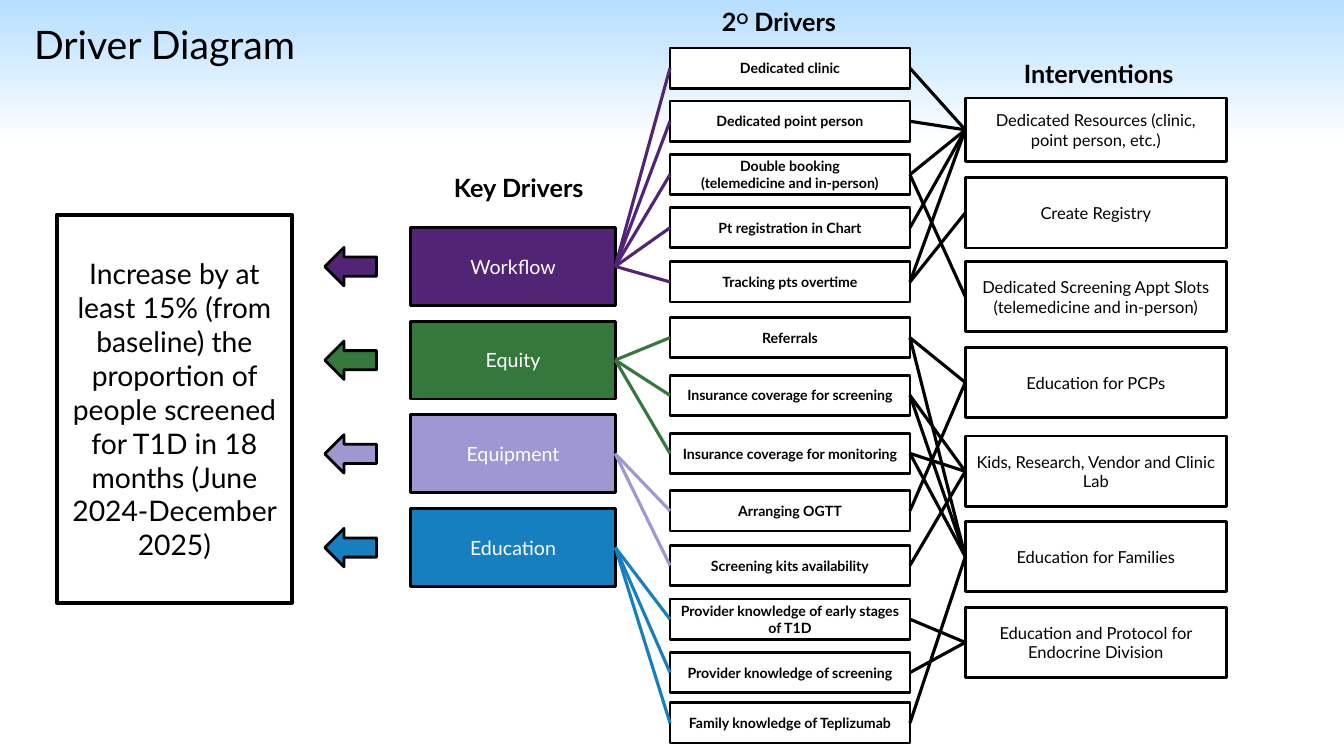
import pptx
import pptx.dml.color
import pptx.enum.shapes
import pptx.enum.text
import pptx.oxml.ns
import pptx.util
from lxml import etree

Pt = pptx.util.Pt
SHAPES = pptx.enum.shapes.MSO_SHAPE
ALIGN = pptx.enum.text.PP_ALIGN
ANCHOR = pptx.enum.text.MSO_ANCHOR
LEFT_SITE, RIGHT_SITE = 1, 3

KEY_DRIVERS = [
    ("Workflow", "522476", range(0, 5)),
    ("Equity", "34793B", range(5, 8)),
    ("Equipment", "9D97D2", range(8, 10)),
    ("Education", "167FC0", range(10, 13)),
]

SECONDARY_DRIVERS = [
    (34.3, "Dedicated clinic", [0]),
    (72.2, "Dedicated point person", [0]),
    (110.3, "Double booking\n(telemedicine and in-person)", [0, 2]),
    (148.3, "Pt registration in Chart", [0]),
    (187, "Tracking pts overtime", [0, 1]),
    (226.8, "Referrals", [3, 5]),
    (268, "Insurance coverage for screening", [4, 5]),
    (309.5, "Insurance coverage for monitoring", [4, 5]),
    (350.5, "Arranging OGTT", [3]),
    (389.5, "Screening kits availability", [4]),
    (427.9, "Provider knowledge of early stages of T1D", [6]),
    (466, "Provider knowledge of screening", [6]),
    (502, "Family knowledge of Teplizumab", [5]),
]

INTERVENTIONS = [
    (70, 45.5, "Dedicated Resources (clinic, point person, etc.)"),
    (126.8, 50.4, "Create Registry"),
    (186.7, 50.4, "Dedicated Screening Appt Slots (telemedicine and in-person)"),
    (248, 50.4, "Education for PCPs"),
    (311.5, 50.4, "Kids, Research, Vendor and Clinic Lab"),
    (372.4, 50.4, "Education for Families"),
    (433.7, 50.4, "Education and Protocol for Endocrine Division"),
]


def color(hex_string):
    return pptx.dml.color.RGBColor.from_string(hex_string)


def add_run(para, text, size, ink="000000", bold=False):
    span = para.add_run()
    span.text = text
    span.font.name = "Lato"
    span.font.size = Pt(size)
    span.font.bold = bold
    span.font.color.rgb = color(ink)
    return span


def add_box(page, left, top, width, height, fill, line_width=2, kind=SHAPES.RECTANGLE):
    box = page.shapes.add_shape(kind, Pt(left), Pt(top), Pt(width), Pt(height))
    box.shadow.inherit = False
    box.fill.solid()
    box.fill.fore_color.rgb = color(fill)
    box.line.color.rgb = color("000000")
    box.line.width = Pt(line_width)
    return box


def add_label(box, text, size, ink="000000", bold=False):
    frame = box.text_frame
    frame.word_wrap = True
    frame.vertical_anchor = ANCHOR.MIDDLE
    for number, line in enumerate(text.split("\n")):
        para = frame.add_paragraph() if number else frame.paragraphs[0]
        para.alignment = ALIGN.CENTER
        add_run(para, line, size, ink, bold)


def add_text(page, left, top, width, height):
    box = page.shapes.add_textbox(Pt(left), Pt(top), Pt(width), Pt(height))
    box.text_frame.word_wrap = True
    return box.text_frame


def add_heading(page, left, top, width, parts):
    frame = add_text(page, left, top, width, 20)
    frame.margin_left = frame.margin_right = 0
    frame.margin_top = frame.margin_bottom = 0
    para = frame.paragraphs[0]
    para.alignment = ALIGN.CENTER
    para.line_spacing = 0.9
    for text, raised in parts:
        span = add_run(para, text, 18, bold=True)
        if raised:
            span.font._element.set("baseline", "30000")


def add_link(page, source, target, hex_string):
    link = page.shapes.add_connector(pptx.enum.shapes.MSO_CONNECTOR.STRAIGHT, 0, 0, 0, 0)
    link.begin_connect(source, RIGHT_SITE)
    link.end_connect(target, LEFT_SITE)
    link.line.color.rgb = color(hex_string)
    link.line.width = Pt(2.25)
    etree.SubElement(link._element.spPr, pptx.oxml.ns.qn("a:effectLst"))


def add_banner(page, left, top, width, height):
    band = add_box(page, left, top, width, height, "FFFFFF")
    band.line.fill.background()
    band.fill.gradient()
    band.fill.gradient_angle = 270
    for stop, position, shade in zip(band.fill.gradient_stops, (0, 1), ("B5DEFF", "FFFFFF")):
        stop.position = position
        stop.color.rgb = color(shade)
    title = add_text(page, left + 17.3, top + 10.8, 392, 41)
    add_run(title.paragraphs[0], "Driver Diagram", 28)


def add_aim(page, left, top, width, height):
    box = add_box(page, left, top, width, height, "FFFFFF", 3)
    add_label(box, "Increase by at least 15% (from baseline) the proportion of people "
                   "screened for T1D in 18 months (June 2024-December 2025)", 20.2)


def add_key_drivers(page, left, top, width, pitch):
    add_heading(page, left + 4, top - 37.2, width, [("Key Drivers", False)])
    boxes = []
    for row, (name, shade, _) in enumerate(KEY_DRIVERS):
        box_top = top + row * pitch
        box = add_box(page, left, box_top, width, 55.6, shade)
        add_label(box, name, 14, "FFFFFF")
        add_box(page, left - 61.5, box_top + 14.2, 37, 27.4, shade, kind=SHAPES.LEFT_ARROW)
        boxes.append(box)
    return boxes


def add_secondary_drivers(page, left, width):
    add_heading(page, left + 4, 7.2, 147.6, [("2", False), ("O", True), (" Drivers", False)])
    boxes = []
    for top, name, _ in SECONDARY_DRIVERS:
        box = add_box(page, left, top, width, 28.8, "FFFFFF")
        add_label(box, name, 10.1, bold=True)
        boxes.append(box)
    return boxes


def add_interventions(page, left, width):
    add_heading(page, left + 21.5, 44, 147.6, [("Interventions", False)])
    boxes = []
    for top, height, name in INTERVENTIONS:
        box = add_box(page, left, top, width, height, "FFFFFF")
        add_label(box, name, 11.8)
        boxes.append(box)
    return boxes


def add_links(page, key_boxes, secondary_boxes, intervention_boxes):
    for source, (_, shade, targets) in zip(key_boxes, KEY_DRIVERS):
        for target in targets:
            add_link(page, source, secondary_boxes[target], shade)
    for source, (_, _, targets) in zip(secondary_boxes, SECONDARY_DRIVERS):
        for target in targets:
            add_link(page, source, intervention_boxes[target], "000000")


def main():
    deck = pptx.Presentation()
    deck.slide_width, deck.slide_height = Pt(960), Pt(540)
    page = deck.slides.add_slide(deck.slide_layouts[6])
    add_banner(page, 0, 0, 960, 103)
    add_aim(page, 40.5, 153.5, 168, 277)
    key_boxes = add_key_drivers(page, 293.5, 162.5, 146, 66.9)
    secondary_boxes = add_secondary_drivers(page, 478.6, 171.4)
    intervention_boxes = add_interventions(page, 689.5, 186.5)
    add_links(page, key_boxes, secondary_boxes, intervention_boxes)
    deck.save("out.pptx")


if __name__ == "__main__":
    main()
